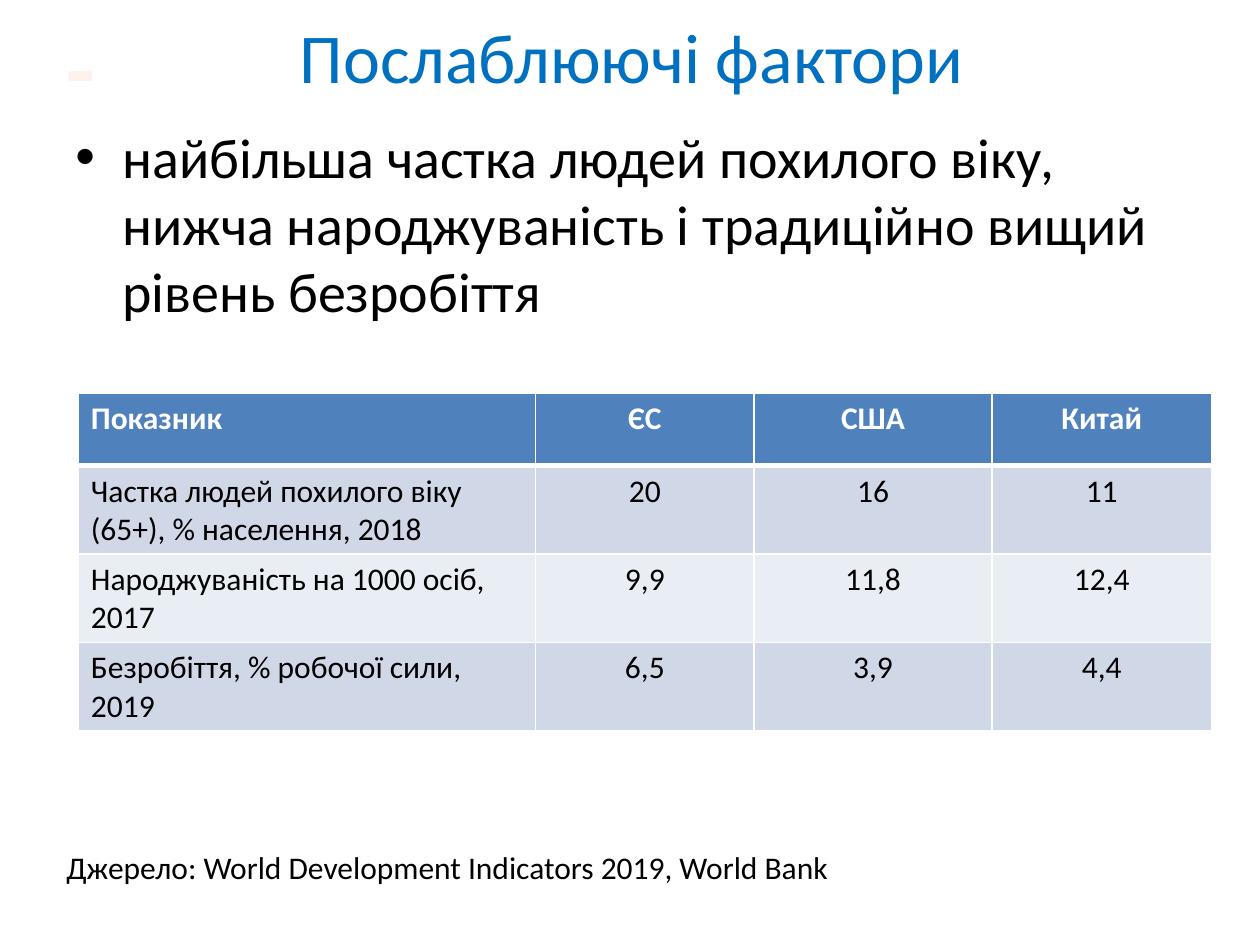
from lxml.etree import SubElement
from pptx import Presentation
from pptx.dml.color import RGBColor
from pptx.enum.text import MSO_ANCHOR as Anchor, PP_ALIGN as Align
from pptx.oxml import parse_xml
from pptx.oxml.ns import nsdecls, qn
from pptx.util import Cm, Pt

BLUE = RGBColor(0x00, 0x70, 0xC0)
BLACK = RGBColor(0x00, 0x00, 0x00)
WHITE = RGBColor(0xFF, 0xFF, 0xFF)
CREAM = RGBColor(0xFF, 0xF2, 0xED)
ORANGE = RGBColor(0xEB, 0x6A, 0x00)
HEADER = RGBColor(0x4F, 0x81, 0xBD)
BAND_DARK = RGBColor(0xD0, 0xD8, 0xE8)
BAND_LIGHT = RGBColor(0xE9, 0xED, 0xF4)


def write(frame, text, size, color, bold=False, align=Align.LEFT):
    frame.word_wrap = True
    paragraph = frame.paragraphs[0]
    paragraph.alignment = align
    run = paragraph.add_run()
    run.text = text
    formats = {"name": "Calibri", "size": Pt(size), "bold": bold}
    for key, value in formats.items():
        setattr(run.font, key, value)
    run.font.color.rgb = color
    return paragraph


def line_xml(tag, color, points):
    return parse_xml(
        f'<a:{tag} {nsdecls("a")} w="{Pt(points)}"><a:solidFill>'
        f'<a:srgbClr val="{color}"/></a:solidFill></a:{tag}>')


deck = Presentation()
deck.slide_width, deck.slide_height = Cm(25.4), Cm(19.05)
slide = deck.slides.add_slide(deck.slide_layouts[5])

# Title
title = slide.shapes.title
box = {"left": Cm(1.3), "top": Cm(0.33), "width": Cm(22.86), "height": Cm(1.57)}
for key, value in box.items():
    setattr(title, key, value)
title.text_frame.vertical_anchor = Anchor.MIDDLE
write(title.text_frame, "Послаблюючі фактори", 40, BLUE, align=Align.CENTER)

# Bulleted statement
factors = slide.shapes.add_textbox(Cm(1.27), Cm(2.34), Cm(22.86), Cm(16.2))
statement = write(
    factors.text_frame,
    "найбільша частка людей похилого віку, нижча народжуваність "
    "і традиційно вищий рівень безробіття", 32, BLACK)
statement.space_before = Pt(6.4)
bullet_props = statement._p.get_or_add_pPr()
bullet_props.set("marL", str(Cm(0.95)))
bullet_props.set("indent", str(-Cm(0.95)))
SubElement(bullet_props, qn("a:buFont")).set("typeface", "Arial")
SubElement(bullet_props, qn("a:buChar")).set("char", "•")

# Outlined dash in the corner
dash = slide.shapes.add_textbox(Cm(0.56), Cm(0.05), Cm(2.13), Cm(2.57))
dash_text = write(dash.text_frame, "-", 54, CREAM, bold=True, align=Align.CENTER)
dash_text.runs[0].font._element.insert(0, line_xml("ln", ORANGE, 2.48))

# Table of indicators
indicators = [
    ("Показник", "ЄС", "США", "Китай"),
    ("Частка людей похилого віку (65+), % населення, 2018", "20", "16", "11"),
    ("Народжуваність на 1000 осіб, 2017", "9,9", "11,8", "12,4"),
    ("Безробіття, % робочої сили, 2019", "6,5", "3,9", "4,4"),
]
table = slide.shapes.add_table(
    4, 4, Cm(1.58), Cm(7.92), Cm(22.86), Cm(5.88)).table
for column, width in zip(table.columns, (9.22, 4.4, 4.8, 4.42)):
    column.width = Cm(width)
for r, values in enumerate(indicators):
    table.rows[r].height = Cm(1.47)
    is_header = r == 0
    fill = HEADER if is_header else (BAND_LIGHT, BAND_DARK)[r % 2]
    for c, value in enumerate(values):
        cell = table.cell(r, c)
        write(cell.text_frame, value, 18, WHITE if is_header else BLACK,
              bold=is_header, align=Align.CENTER if c else Align.LEFT)
        # Borders come before the fill in the cell properties
        for side in ("lnL", "lnR", "lnT", "lnB"):
            thick = (is_header and side == "lnB") or (r == 1 and side == "lnT")
            cell._tc.get_or_add_tcPr().append(
                line_xml(side, WHITE, 3 if thick else 1))
        cell.fill.solid()
        cell.fill.fore_color.rgb = fill

# Source of the data
source = slide.shapes.add_textbox(Cm(1.09), Cm(16.97), Cm(23.8), Cm(1.02))
write(source.text_frame,
      "Джерело: World Development Indicators 2019, World Bank", 18, BLACK)

deck.save("out.pptx")
